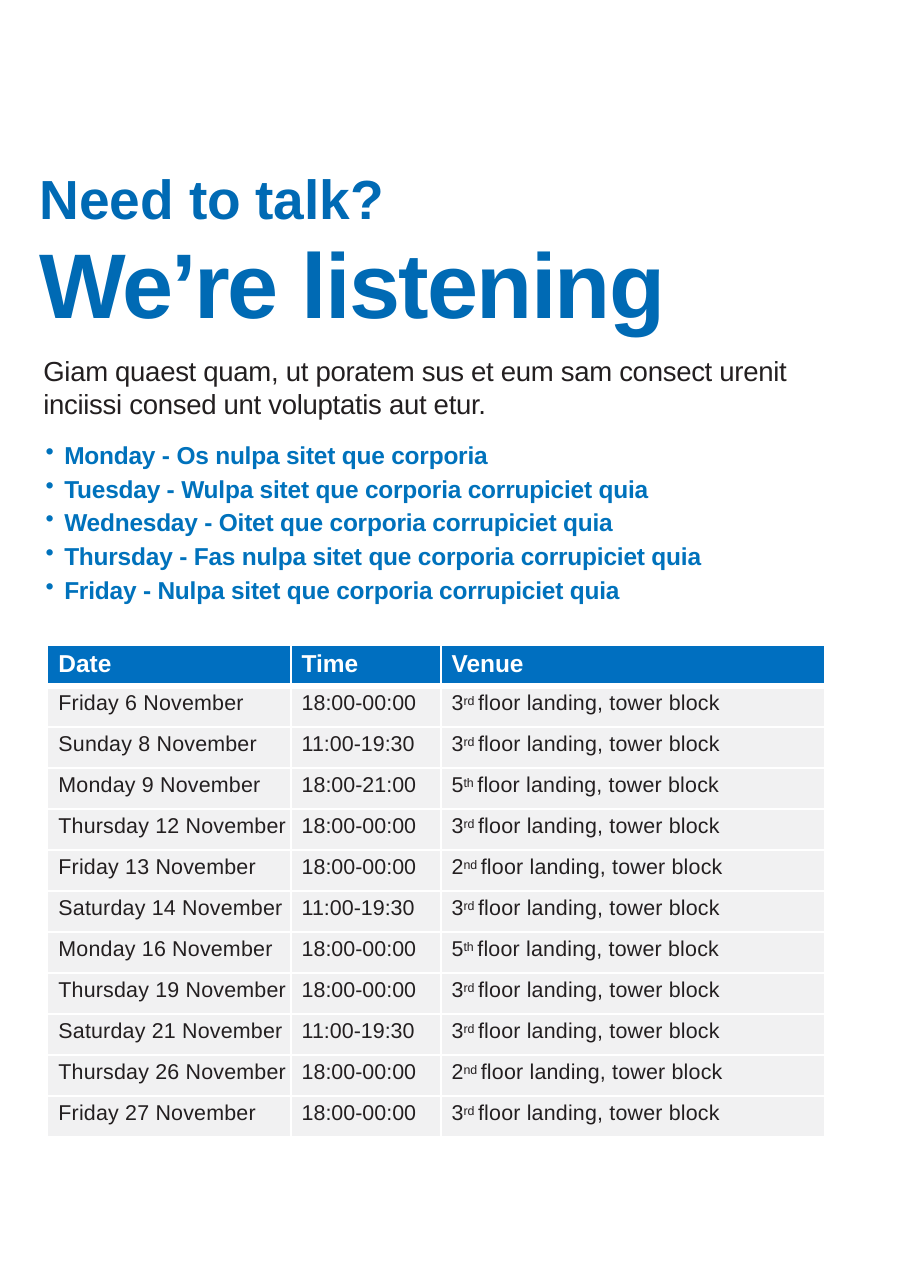
from dataclasses import dataclass
from typing import NamedTuple, Optional

from lxml.etree import SubElement
from pptx import Presentation
from pptx.dml.color import RGBColor as Rgb
from pptx.oxml.ns import qn
from pptx.util import Pt


@dataclass(frozen=True)
class Theme:
    font: str = "Arial"
    title: Rgb = Rgb(0x00, 0x6A, 0xB4)
    list: Rgb = Rgb(0x00, 0x72, 0xBC)
    head: Rgb = Rgb(0x00, 0x6F, 0xC0)
    row: Rgb = Rgb(0xF1, 0xF1, 0xF2)
    ink: Rgb = Rgb(0x23, 0x1F, 0x20)
    white: Rgb = Rgb(0xFF, 0xFF, 0xFF)
    small: float = 14
    mid: float = 16
    intro: float = 18
    ask: float = 36
    hero: float = 60


class Piece(NamedTuple):
    text: str
    track: float = 0
    lift: int = 0


@dataclass(frozen=True)
class Para:
    pieces: list[Piece]
    size: float
    color: Rgb
    bold: bool = False
    before: float = 0
    line: Optional[float] = None
    bullet: bool = False


class Shift(NamedTuple):
    date: str
    time: str
    floor: str
    rank: str


THEME = Theme()
DAYS = [
    "Monday - Os nulpa sitet que corporia",
    "Tuesday - Wulpa sitet que corporia corrupiciet quia",
    "Wednesday - Oitet que corporia corrupiciet quia",
    "Thursday - Fas nulpa sitet que corporia corrupiciet quia",
    "Friday - Nulpa sitet que corporia corrupiciet quia",
]
HEADS = ["Date", "Time", "Venue"]
LATE, DAY, EVE = "18:00-00:00", "11:00-19:30", "18:00-21:00"
SHIFTS = [
    Shift("Friday 6 November", LATE, "3", "rd"),
    Shift("Sunday 8 November", DAY, "3", "rd"),
    Shift("Monday 9 November", EVE, "5", "th"),
    Shift("Thursday 12 November", LATE, "3", "rd"),
    Shift("Friday 13 November", LATE, "2", "nd"),
    Shift("Saturday 14 November", DAY, "3", "rd"),
    Shift("Monday 16 November", LATE, "5", "th"),
    Shift("Thursday 19 November", LATE, "3", "rd"),
    Shift("Saturday 21 November", DAY, "3", "rd"),
    Shift("Thursday 26 November", LATE, "2", "nd"),
    Shift("Friday 27 November", LATE, "3", "rd"),
]
COLS = [159, 98, 251.3]
ROW = 26.82
THIN, THICK = 1.5, 4.5


def write(frame, paras: list[Para]) -> None:
    for i, para in enumerate(paras):
        p = frame.add_paragraph() if i else frame.paragraphs[0]
        if para.bullet:
            props = p._p.get_or_add_pPr()
            props.set("marL", str(Pt(13.7)))
            props.set("indent", str(-Pt(12.2)))
            SubElement(props, qn("a:buChar"), char="•")
        if para.before:
            p.space_before = Pt(para.before)
        if para.line:
            p.line_spacing = para.line
        font = p.font
        font.name, font.size, font.bold = THEME.font, Pt(para.size), para.bold
        font.color.rgb = para.color
        for piece in para.pieces:
            run = p.add_run()
            run.text = piece.text
            props = run._r.get_or_add_rPr()
            if piece.track:
                props.set("spc", str(round(piece.track * 100)))
            if piece.lift:
                props.set("baseline", str(piece.lift * 1000))


def add_box(slide, left: float, top: float, width: float, height: float,
            paras: list[Para]) -> None:
    box = slide.shapes.add_textbox(Pt(left), Pt(top), Pt(width), Pt(height))
    frame = box.text_frame
    frame.word_wrap = True
    frame.margin_left, frame.margin_right = Pt(0.9), 0
    frame.margin_top, frame.margin_bottom = Pt(0.9), 0
    write(frame, paras)


def edge(cell, top: float, base: float) -> None:
    """Give the cell white borders; the line elements must precede its fill."""
    props = cell._tc.get_or_add_tcPr()
    sides = {"lnL": THIN, "lnR": THIN, "lnT": top, "lnB": base}
    for i, (side, width) in enumerate(sides.items()):
        line = SubElement(props, qn(f"a:{side}"), w=str(Pt(width)))
        fill = SubElement(line, qn("a:solidFill"))
        SubElement(fill, qn("a:srgbClr"), val=str(THEME.white))
        props.insert(i, line)


def row_of(shift: Shift) -> list[list[Piece]]:
    venue = [Piece(shift.floor), Piece(f"{shift.rank} ", lift=26),
             Piece("floor landing, tower block", 0.1)]
    return [[Piece(shift.date, 0.1)], [Piece(shift.time)], venue]


def add_rota(slide) -> None:
    rows = [[[Piece(head)] for head in HEADS], *map(row_of, SHIFTS)]
    table = slide.shapes.add_table(len(rows), len(COLS), Pt(31), Pt(421.2),
                                   Pt(sum(COLS)), Pt(ROW * len(rows))).table
    table.horz_banding = False
    for col, width in zip(table.columns, COLS):
        col.width = Pt(width)
    for r, row in enumerate(rows):
        table.rows[r].height = Pt(ROW)
        head = r == 0
        for c, pieces in enumerate(row):
            cell = table.cell(r, c)
            cell.margin_left, cell.margin_right = Pt(7.2), 0
            cell.margin_top, cell.margin_bottom = Pt(3.6), 0
            cell.fill.solid()
            cell.fill.fore_color.rgb = THEME.head if head else THEME.row
            edge(cell, THICK if r == 1 else THIN, THICK if head else THIN)
            size = THEME.mid if head else THEME.small
            color = THEME.white if head else THEME.ink
            write(cell.text_frame, [Para(pieces, size, color, bold=head)])


def main() -> None:
    deck = Presentation()
    deck.slide_width, deck.slide_height = Pt(595.44), Pt(841.68)
    slide = deck.slides.add_slide(deck.slide_layouts[6])

    add_rota(slide)
    add_box(slide, 25.2, 123.1, 470.9, 97.9, [
        Para([Piece("Need to talk?", -0.1)], THEME.ask, THEME.title,
             bold=True, line=Pt(26.5)),
        Para([Piece("We’re ", -1.6), Piece("listening", -1.1)], THEME.hero,
             THEME.title, bold=True, line=Pt(69.7)),
    ])
    intro = ("Giam quaest quam, ut poratem sus et eum sam consect urenit "
             "inciissi consed unt voluptatis aut etur.")
    days = [Para([Piece(day, -0.1)], THEME.mid, THEME.list, bold=True,
                 before=2.8 if i else 12.9, bullet=True)
            for i, day in enumerate(DAYS)]
    add_box(slide, 27.4, 229.7, 511.9, 167, [
        Para([Piece(intro, -0.2)], THEME.intro, THEME.ink, line=1.02), *days])

    deck.save("out.pptx")


if __name__ == "__main__":
    main()
